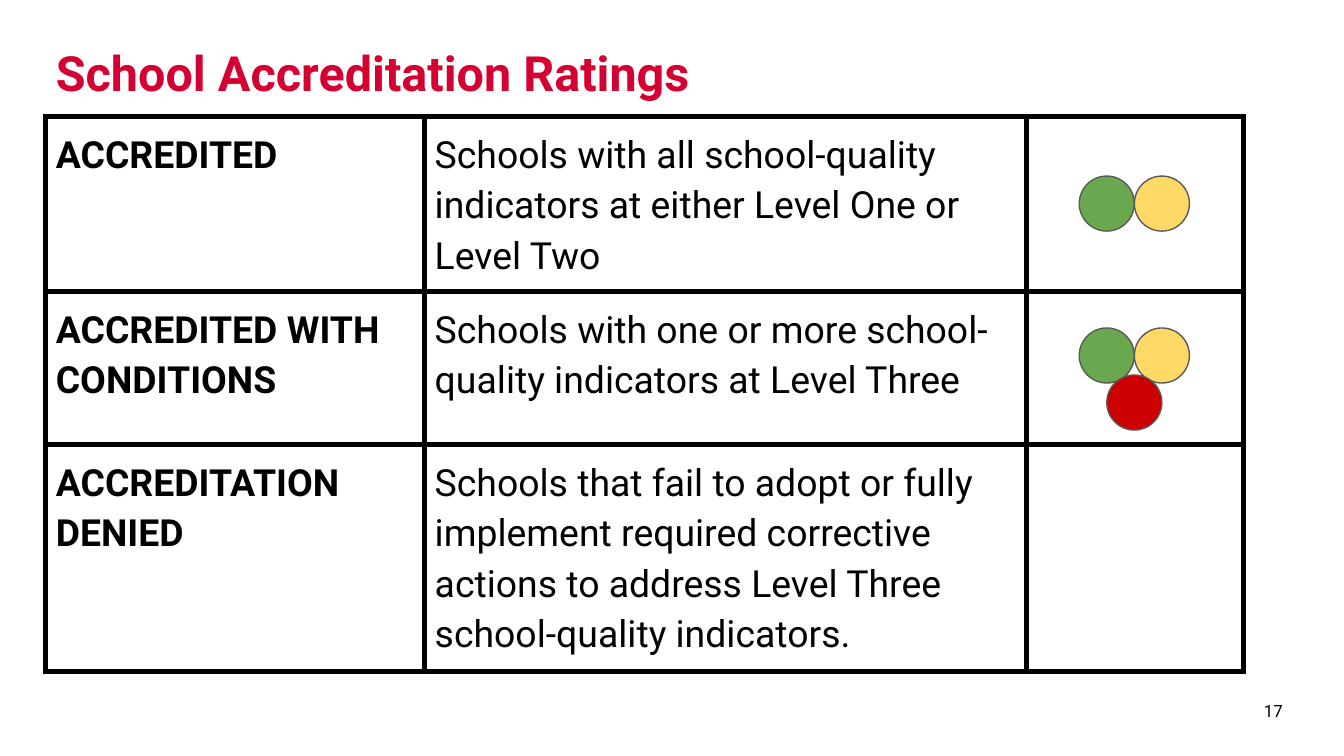
from lxml.etree import SubElement
from pptx import Presentation
from pptx.dml.color import RGBColor
from pptx.enum.shapes import MSO_SHAPE
from pptx.enum.text import MSO_ANCHOR, PP_ALIGN
from pptx.oxml.ns import qn
from pptx.util import Inches, Pt

COLORS = {
    "title": "D50032", "text": "000000", "border": "000000",
    "green": "6AA84F", "yellow": "FFD966", "red": "CC0000", "rim": "595959",
}
FONT = "Roboto"
PAD = Pt(5.4)
COLS = [2.82, 4.48, 1.61]
ROWS = [
    (1.18, "ACCREDITED",
     "Schools with all school-quality indicators at either Level One or Level Two"),
    (1.14, "ACCREDITED WITH CONDITIONS",
     "Schools with one or more school-quality indicators at Level Three"),
    (1.53, "ACCREDITATION DENIED",
     "Schools that fail to adopt or fully implement required corrective "
     "actions to address Level Three school-quality indicators."),
]
SIZE = 0.41
LEFT = 8.03
LIGHTS = [
    (LEFT, 1.31, "green"), (LEFT + SIZE, 1.31, "yellow"),
    (LEFT, 2.44, "green"), (LEFT + SIZE, 2.44, "yellow"),
    (LEFT + SIZE / 2, 2.79, "red"),
]


def color(name):
    return RGBColor.from_string(COLORS[name])


def apply(target, values):
    for key, value in values.items():
        setattr(target, key, value)


def set_text(frame, text, size, tone="text", bold=False, **para):
    """Fill a text frame with one formatted paragraph."""
    line = frame.paragraphs[0]
    apply(line, para)
    run = line.add_run()
    run.text = text
    apply(run.font, {"name": FONT, "size": Pt(size), "bold": bold})
    run.font.color.rgb = color(tone)


def set_frame(frame):
    apply(frame, {
        "word_wrap": True, "vertical_anchor": MSO_ANCHOR.MIDDLE,
        "margin_left": PAD, "margin_right": PAD,
        "margin_top": Inches(0.04), "margin_bottom": Inches(0.04),
    })


def add_title(slide, text):
    title = slide.shapes.title
    apply(title, {"left": Inches(0.34), "top": Inches(0.14),
                  "width": Inches(8.9), "height": Inches(0.85)})
    set_frame(title.text_frame)
    set_text(title.text_frame, text, 26, "title", True,
             line_spacing=0.9, alignment=PP_ALIGN.LEFT)


def add_number(slide, text):
    box = slide.shapes.add_textbox(
        Inches(9.2), Inches(5.08), Inches(0.55), Inches(0.41))
    set_frame(box.text_frame)
    set_text(box.text_frame, text, 9, alignment=PP_ALIGN.CENTER)


def set_cell(cell):
    """Give a cell its margins, black borders and no fill."""
    for side in ("left", "right", "top", "bottom"):
        setattr(cell, f"margin_{side}", PAD)
    props = cell._tc.get_or_add_tcPr()
    for tag in ("a:lnL", "a:lnR", "a:lnT", "a:lnB"):
        edge = SubElement(props, qn(tag), w=str(Pt(3)))
        fill = SubElement(edge, qn("a:solidFill"))
        SubElement(fill, qn("a:srgbClr"), val=COLORS["border"])
    cell.fill.background()


def add_ratings(slide):
    table = slide.shapes.add_table(
        len(ROWS), len(COLS), Inches(0.34), Inches(0.87),
        Inches(8.9), Inches(4.12)).table
    apply(table, {"first_row": False, "horz_banding": False})
    for col, width in zip(table.columns, COLS):
        col.width = Inches(width)
    for row, (height, *texts) in zip(table.rows, ROWS):
        row.height = Inches(height)
        for cell in row.cells:
            set_cell(cell)
        for index, text in enumerate(texts):
            set_text(row.cells[index].text_frame, text, 20,
                     bold=index == 0, line_spacing=1.15)


def add_light(slide, left, top, tone):
    light = slide.shapes.add_shape(
        MSO_SHAPE.OVAL, Inches(left), Inches(top), Inches(SIZE), Inches(SIZE))
    light.shadow.inherit = False
    light.fill.solid()
    light.fill.fore_color.rgb = color(tone)
    light.line.color.rgb = color("rim")
    light.line.width = Pt(0.75)


def main():
    deck = Presentation()
    apply(deck, {"slide_width": Inches(10), "slide_height": Inches(5.625)})
    slide = deck.slides.add_slide(deck.slide_layouts[5])
    add_title(slide, "School Accreditation Ratings")
    add_number(slide, "17")
    add_ratings(slide)
    for light in LIGHTS:
        add_light(slide, *light)
    deck.save("out.pptx")


if __name__ == "__main__":
    main()
